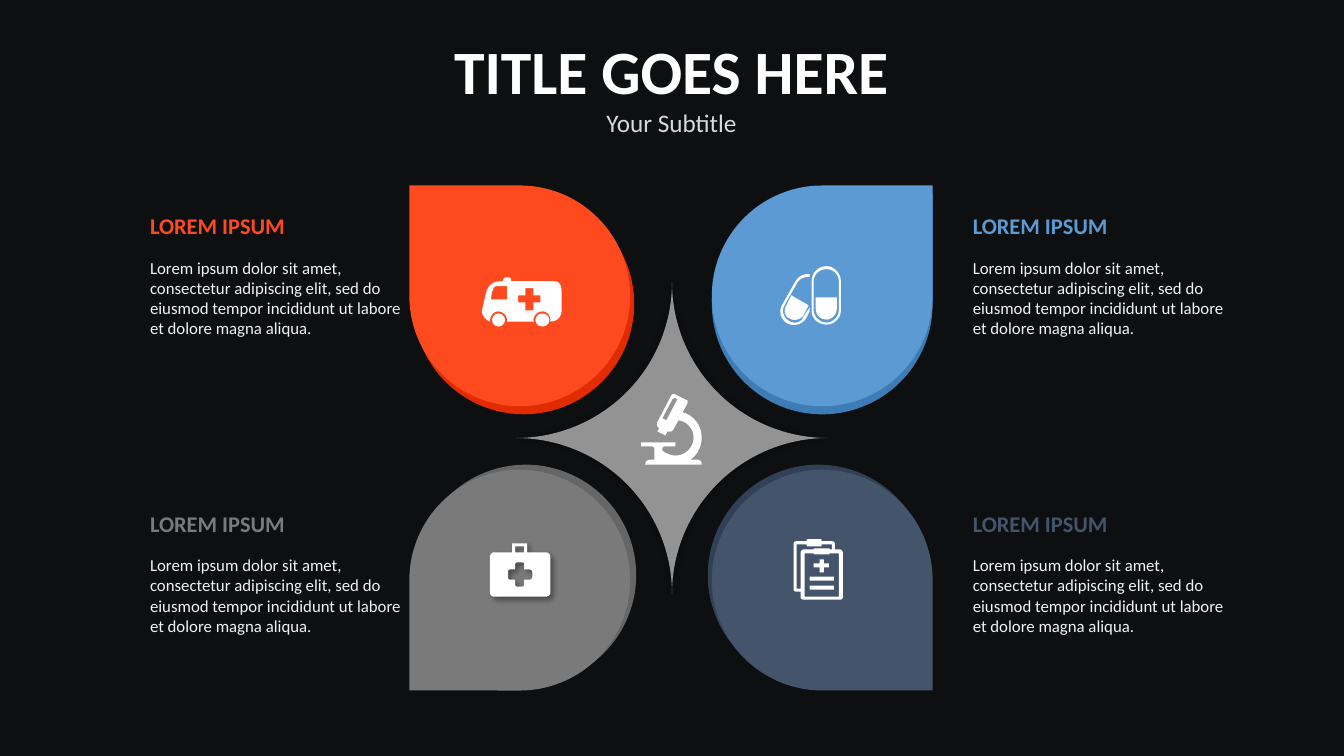
from dataclasses import dataclass

from lxml import etree
from pptx import Presentation
from pptx.dml.color import RGBColor
from pptx.enum.shapes import MSO_SHAPE
from pptx.enum.text import PP_ALIGN
from pptx.oxml.ns import qn
from pptx.util import Pt

PX = 9144  # 100 px to the inch
DROP, STAR = MSO_SHAPE.TEAR, MSO_SHAPE.PLAQUE
RECT, OVAL = MSO_SHAPE.RECTANGLE, MSO_SHAPE.OVAL
LEFT, MID = PP_ALIGN.LEFT, PP_ALIGN.CENTER


@dataclass(frozen=True)
class Theme:
    font: str = "Calibri"
    back: str = "0E0F11"
    star: str = "939393"
    white: str = "FFFFFF"
    soft: str = "D9D9D9"
    body: str = "F2F2F2"
    title_size: int = 44
    sub_size: int = 18
    head_size: int = 16
    body_size: int = 12
    body_gap: int = 13


THEME = Theme()
TITLE, SUB = "TITLE GOES HERE", "Your Subtitle"
HEAD = "LOREM IPSUM"
BODY = ("Lorem ipsum dolor sit amet, consectetur adipiscing elit, sed do "
        "eiusmod tempor incididunt ut labore et dolore magna aliqua.")

# column, row, turn, front colour, rim colour, rim offset
DROPS = [
    (0, 0, 270, "FE4A1E", "E02C00", (4, 8)),
    (1, 0, 0, "5C9AD3", "3E7CB5", (0, 8)),
    (0, 1, 180, "7A7A7A", "666666", (6, -5)),
    (1, 1, 90, "44546B", "304057", (-4, -5)),
]
DROP_X, DROP_Y, DROP_SIZE = (406, 706), (184, 466), 219
TEXT_X, TEXT_Y, TEXT_W, TEXT_H = (139, 955), (206, 501), 270, 138
STAR_BOX = (512, 280, 309, 309)
TITLE_BOX = (365, 28, 602, 114)

# Outlines in px: M starts a ring, L is a line, C is a cubic curve
SCOPE = [
    """M 688 456 L 685 456 C 692 451 696 443 696 434 C 696 422 688 412 677 409
    L 682 400 C 682 398 682 397 681 397 L 669 391 C 668 391 667 391 666 392
    L 652 419 C 651 421 652 424 654 425 L 652 428 L 660 432 L 662 428
    C 664 429 667 428 668 426 L 673 417 C 681 418 688 425 688 434
    C 688 444 680 452 670 452 C 666 452 660 450 657 447 L 657 445
    C 657 444 658 443 659 443 L 670 443 L 670 439 L 636 439 L 636 443 L 647 443
    C 648 443 649 444 649 445 L 649 456 C 644 456 640 456 640 461 L 696 461
    C 696 456 693 456 688 456
    M 673 397 C 672 397 671 397 671 398 L 661 417 L 657 415 L 667 396
    C 667 396 668 395 670 395 L 673 397""",
]
PILLS = [
    """M 805 308 L 805 279 C 805 271 811 264 820 264 C 827 264 834 271 834 279
    L 834 308 C 834 316 827 322 820 322 C 811 322 805 316 805 308
    M 807 279 L 807 308 C 807 314 813 320 820 320 C 826 320 832 314 832 308
    L 832 279 C 832 272 826 267 820 267 C 813 267 807 272 807 279""",
    """M 830 295 L 830 306 C 830 312 825 317 820 317 C 813 317 809 312 809 306
    L 809 295""",
    """M 802 303 L 797 313 C 794 317 788 319 783 316 C 778 314 777 307 780 303
    L 785 293""",
    """M 776 302 L 789 279 C 792 274 798 271 803 272 L 803 275
    C 799 274 794 276 791 280 L 778 303 C 775 308 777 315 782 318
    C 788 322 795 320 797 314 L 803 305 L 803 309 L 800 315
    C 796 322 788 324 781 321 C 774 317 772 308 776 302""",
]
VAN = [
    """M 549 279 L 507 279 C 507 276 506 275 503 275 C 501 275 499 276 499 279
    L 497 279 C 490 279 484 282 482 291 L 478 308 C 478 313 481 317 486 319
    L 486 318 C 486 313 490 309 494 309 C 499 309 503 313 503 318 L 503 319
    L 530 319 L 529 318 C 529 313 533 309 538 309 C 543 309 546 313 546 318
    L 546 319 C 553 319 557 314 557 308 L 557 291 C 557 284 556 279 549 279
    M 503 297 L 487 297 L 488 289 C 489 289 489 288 489 287
    C 490 283 494 284 494 284 L 503 284
    M 536 300 L 529 300 L 529 308 L 521 308 L 521 300 L 514 300 L 514 293
    L 521 293 L 521 286 L 529 286 L 529 293 L 536 293""",
]
CHART = [
    """M 833 545 L 828 545 L 828 540 C 828 538 827 537 825 537 L 815 537
    C 815 536 815 535 814 535 L 801 535 C 800 535 800 536 800 537 L 790 537
    C 788 537 787 538 787 540 L 787 584 C 787 586 788 587 790 587 L 794 587
    L 794 593 C 794 594 796 595 797 595 L 833 595 C 834 595 836 594 836 593
    L 836 548 C 836 547 834 545 833 545
    M 794 548 L 794 584 L 790 584 L 790 540 L 800 540 C 800 541 800 542 801 542
    L 814 542 C 815 542 815 541 815 540 L 825 540 L 825 545 L 823 545
    C 823 544 822 544 821 544 L 809 544 C 808 544 807 544 807 545 L 797 545
    C 796 545 794 547 794 548
    M 832 592 L 798 592 L 798 549 L 807 549 C 807 550 808 550 809 550 L 821 550
    C 822 550 823 550 823 549 L 832 549""",
    """M 813 568 L 817 568 L 817 563 L 822 563 L 822 559 L 817 559 L 817 555
    L 813 555 L 813 559 L 807 559 L 807 563 L 813 563""",
]
KIT = [
    """M 541 548 L 523 548 L 523 539 L 508 539 L 508 548 L 490 548
    C 488 548 486 550 486 553 L 486 588 C 486 590 488 592 490 592 L 541 592
    C 544 592 546 590 546 588 L 546 553 C 546 550 544 548 541 548
    M 511 542 L 520 542 L 520 548 L 511 548
    M 528 572 C 528 574 527 575 525 575 L 520 575 L 520 580
    C 520 581 519 582 518 582 L 513 582 C 512 582 511 581 511 580 L 511 575
    L 506 575 C 504 575 504 574 504 572 L 504 568 C 504 566 504 565 506 565
    L 511 565 L 511 560 C 511 559 512 558 513 558 L 518 558
    C 519 558 520 559 520 560 L 520 565 L 525 565 C 527 565 528 566 528 568""",
]
PARTS = [
    (OVAL, (488, 311, 13, 13)), (OVAL, (531, 311, 14, 13)),
    (RECT, (803, 572, 24, 4)), (RECT, (803, 581, 24, 4)),
]


def paint(shape, color):
    shape.shadow.inherit = False
    shape.fill.solid()
    shape.fill.fore_color.rgb = RGBColor.from_string(color)
    shape.line.fill.background()
    return shape


def shade(shape, blur, dist, angle):
    """Give a painted shape a black shadow at 40 percent."""
    effects = shape._element.spPr.find(qn("a:effectLst"))
    outer = etree.SubElement(effects, qn("a:outerShdw"), blurRad=str(Pt(blur)),
                             dist=str(Pt(dist)), dir=str(angle * 60000),
                             algn="ctr", rotWithShape="0")
    black = etree.SubElement(outer, qn("a:srgbClr"), val="000000")
    etree.SubElement(black, qn("a:alpha"), val="40000")


def add_part(slide, kind, box, color):
    return paint(slide.shapes.add_shape(kind, *(n * PX for n in box)), color)


def bend(ends, steps=8):
    """Return points along a cubic curve, without its start."""
    weights = [((1 - t) ** 3, 3 * t * (1 - t) ** 2, 3 * t * t * (1 - t), t ** 3)
               for t in (n / steps for n in range(1, steps + 1))]
    return [tuple(sum(w * p[axis] for w, p in zip(row, ends)) for axis in (0, 1))
            for row in weights]


def trace(ring):
    points, words = [], iter(ring.split())
    for word in words:
        count = 3 if word == "C" else 1
        ends = [(int(next(words)) * PX, int(next(words)) * PX) for _ in range(count)]
        points += bend([points[-1], *ends]) if word == "C" else ends
    return points


def add_outline(slide, outline, color):
    rings = [trace("M" + ring) for ring in outline.split("M")[1:]]
    pen = slide.shapes.build_freeform(*rings[0][0])
    for index, ring in enumerate(rings):
        if index:
            pen.move_to(*ring[0])
        pen.add_line_segments(ring[1:], close=True)
    return paint(pen.convert_to_shape(), color)


def add_text(slide, box, lines, align):
    """Write lines of (text, size, colour, bold, space before)."""
    frame = slide.shapes.add_textbox(*(n * PX for n in box)).text_frame
    frame.word_wrap = True
    for index, (text, size, color, bold, gap) in enumerate(lines):
        para = frame.add_paragraph() if index else frame.paragraphs[0]
        para.text, para.alignment = text, align
        para.font.name, para.font.size, para.font.bold = THEME.font, Pt(size), bold
        para.font.color.rgb = RGBColor.from_string(color)
        if gap:
            para.space_before = Pt(gap)


def main():
    deck = Presentation()
    deck.slide_width, deck.slide_height = 1333 * PX, 750 * PX
    slide = deck.slides.add_slide(deck.slide_layouts[6])
    slide.background.fill.solid()
    slide.background.fill.fore_color.rgb = RGBColor.from_string(THEME.back)

    star = add_part(slide, STAR, STAR_BOX, THEME.star)
    star.adjustments[0] = 0.5
    shade(star, 5, 0, 0)

    add_text(slide, TITLE_BOX, [
        (TITLE, THEME.title_size, THEME.white, True, 0),
        (SUB, THEME.sub_size, THEME.soft, False, 0)], MID)
    for col, row, turn, front, rim, (dx, dy) in DROPS:
        x, y = DROP_X[col], DROP_Y[row]
        for left, top, color in ((x + dx, y + dy, rim), (x, y, front)):
            box = (left, top, DROP_SIZE, DROP_SIZE)
            add_part(slide, DROP, box, color).rotation = turn
        add_text(slide, (TEXT_X[col], TEXT_Y[row], TEXT_W, TEXT_H), [
            (HEAD, THEME.head_size, front, True, 0),
            (BODY, THEME.body_size, THEME.body, False, THEME.body_gap)], LEFT)

    for outline in SCOPE + PILLS + VAN + CHART:
        add_outline(slide, outline, THEME.white)
    for kind, box in PARTS:
        add_part(slide, kind, box, THEME.white)
    for outline in KIT:
        shade(add_outline(slide, outline, THEME.white), 4, 3, 45)

    deck.save("out.pptx")


if __name__ == "__main__":
    main()
